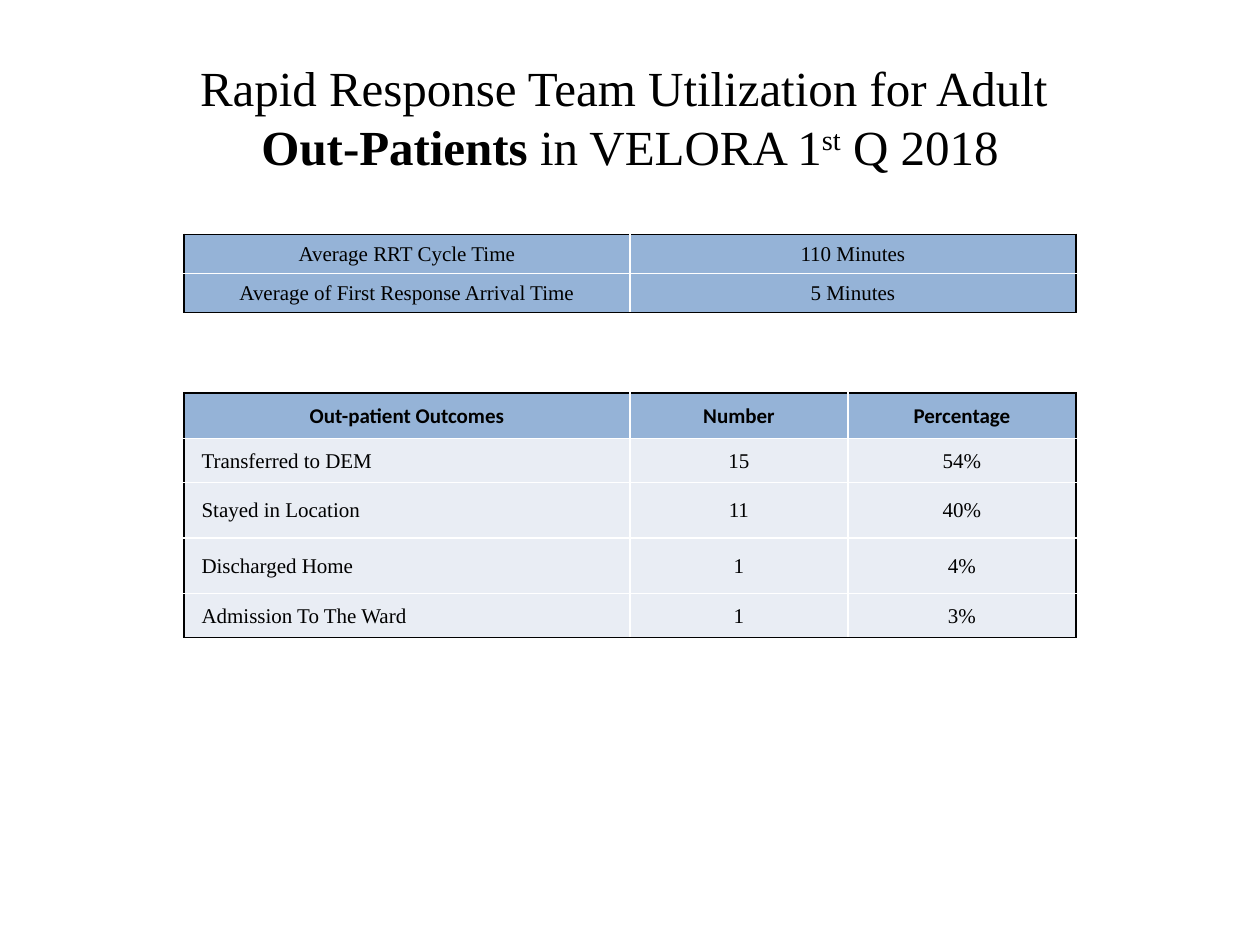
from lxml.etree import SubElement
from pptx import Presentation
from pptx.dml.color import RGBColor
from pptx.enum.text import MSO_ANCHOR, PP_ALIGN
from pptx.oxml.ns import qn
from pptx.util import Inches, Pt

COLORS = {"text": "000000", "frame": "000000", "grid": "FFFFFF",
          "header": "95B3D7", "body": "E9EDF4"}
SERIF = "Times New Roman"
TABLE_LEFT = 1.46

RESPONSE_TIMES = [
    ["Average RRT Cycle Time", "110 Minutes"],
    ["Average of First Response Arrival Time", "5 Minutes"],
]
OUTCOMES = [
    ["Out-patient Outcomes", "Number", "Percentage"],
    ["Transferred to DEM", "15", "54%"],
    ["Stayed in Location", "11", "40%"],
    ["Discharged Home", "1", "4%"],
    ["Admission To The Ward", "1", "3%"],
]


def set_font(font, name, size, bold=False):
    font.name = name
    font.size = Pt(size)
    font.bold = bold
    font.color.rgb = RGBColor.from_string(COLORS["text"])


def add_title(slide):
    title = slide.shapes.title
    title.left, title.top = Inches(0.5), Inches(0.3)
    title.width, title.height = Inches(9), Inches(1.25)
    title.text_frame.vertical_anchor = MSO_ANCHOR.MIDDLE
    paragraph = title.text_frame.paragraphs[0]
    paragraph.alignment = PP_ALIGN.CENTER
    set_font(paragraph.font, SERIF, 28)

    paragraph.add_run().text = "Rapid Response Team Utilization for Adult "
    paragraph.add_line_break()
    emphasis = paragraph.add_run()
    emphasis.text = "Out-Patients"
    emphasis.font.bold = True
    paragraph.add_run().text = " in VELORA 1"
    ordinal = paragraph.add_run()
    ordinal.text = "st"
    ordinal.font._element.set("baseline", "30000")
    paragraph.add_run().text = " Q 2018"


def set_borders(cell, outer_edges):
    """Draw dark lines on the outer edges of the table, white ones inside."""
    properties = cell._tc.get_or_add_tcPr()
    for edge in "LRTB":
        line = SubElement(properties, qn(f"a:ln{edge}"), w=str(Pt(1)))
        fill = SubElement(line, qn("a:solidFill"))
        color = COLORS["frame" if edge in outer_edges else "grid"]
        SubElement(fill, qn("a:srgbClr"), val=color)


def format_cell(cell, text, fill, font_name, bold, indented):
    cell.fill.solid()
    cell.fill.fore_color.rgb = RGBColor.from_string(COLORS[fill])
    cell.vertical_anchor = MSO_ANCHOR.MIDDLE
    cell.margin_left = cell.margin_right = cell.margin_top = Inches(0.01)
    cell.margin_bottom = 0
    cell.text = text
    paragraph = cell.text_frame.paragraphs[0]
    set_font(paragraph.font, font_name, 12, bold)
    if indented:
        paragraph.alignment = PP_ALIGN.LEFT
        paragraph._p.get_or_add_pPr().set("marL", str(Inches(0.13)))
    else:
        paragraph.alignment = PP_ALIGN.CENTER


def add_table(slide, top, rows, widths, heights, has_heading):
    """Without a heading row, every row takes the header colour."""
    table = slide.shapes.add_table(
        len(rows), len(widths), Inches(TABLE_LEFT), Inches(top),
        Inches(sum(widths)), Inches(sum(heights))).table
    table.first_row = has_heading
    table.horz_banding = False
    for column, width in zip(table.columns, widths):
        column.width = Inches(width)
    for row, height in zip(table.rows, heights):
        row.height = Inches(height)

    for i, values in enumerate(rows):
        is_heading = has_heading and i == 0
        is_body = has_heading and i > 0
        for j, text in enumerate(values):
            cell = table.cell(i, j)
            outer_edges = {"L": j == 0, "R": j == len(widths) - 1,
                           "T": i == 0, "B": i == len(rows) - 1}
            set_borders(cell, [edge for edge, outer in outer_edges.items() if outer])
            format_cell(cell, text, "body" if is_body else "header",
                        "Calibri" if is_heading else SERIF,
                        bold=is_heading, indented=is_body and j == 0)


def main():
    presentation = Presentation()
    presentation.slide_width = Inches(10)
    presentation.slide_height = Inches(7.5)
    slide = presentation.slides.add_slide(presentation.slide_layouts[5])

    add_title(slide)
    # Response times
    add_table(slide, 1.86, RESPONSE_TIMES, [3.54, 3.54], [0.31, 0.31],
              has_heading=False)
    # Outcomes of the calls
    add_table(slide, 3.12, OUTCOMES, [3.54, 1.73, 1.81],
              [0.36, 0.35, 0.44, 0.44, 0.35], has_heading=True)

    presentation.save("out.pptx")


if __name__ == "__main__":
    main()
